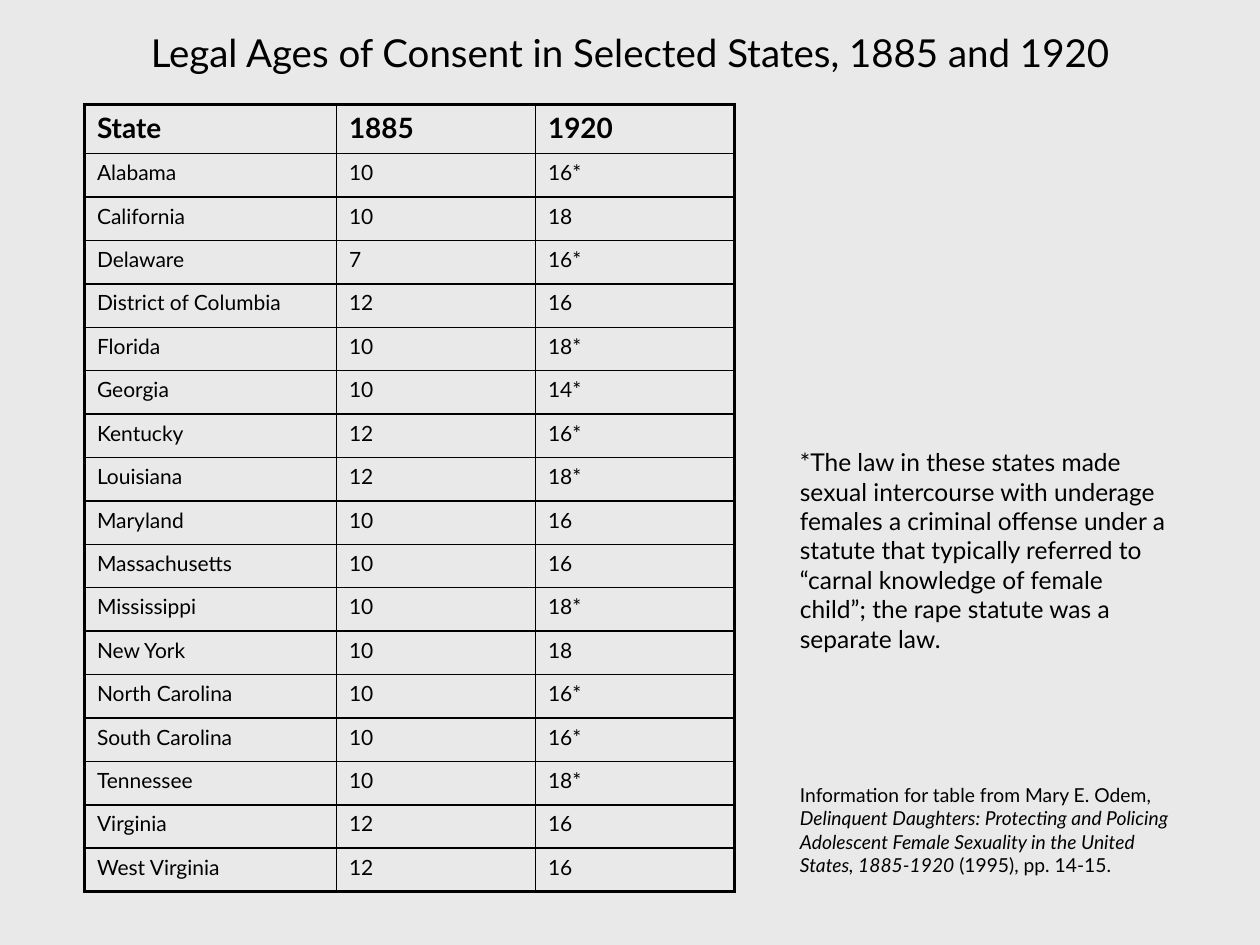
"""Build a slide comparing legal ages of consent by state, 1885 and 1920."""
from typing import NamedTuple

from lxml import etree
from pptx import Presentation, util as u
from pptx.dml.color import RGBColor
from pptx.enum import text
from pptx.oxml import ns

FONT, INK, PAPER = "Lato", "000000", "E9E9E9"
WIDTH, HEIGHT = u.Inches(10), u.Inches(7.5)
THICK, THIN = 2.25, 1
HEADER_HEIGHT, TABLE_HEIGHT = 0.39, 6.25
COLUMNS = (2, 1.58, 1.58)


class Area(NamedTuple):
    """A rectangle in inches."""

    left: float
    top: float
    width: float
    height: float

    def lengths(self) -> list[int]:
        return [u.Inches(value) for value in self]


class Span(NamedTuple):
    """A stretch of text in one style."""

    words: str
    italic: bool = False


class Note(NamedTuple):
    """A text box beside the table."""

    area: Area
    size: float
    spans: tuple[Span, ...]


class Record(NamedTuple):
    """A table row."""

    state: str
    earlier: str
    later: str


RECORDS = (
    Record("State", "1885", "1920"),
    Record("Alabama", "10", "16*"),
    Record("California", "10", "18"),
    Record("Delaware", "7", "16*"),
    Record("District of Columbia", "12", "16"),
    Record("Florida", "10", "18*"),
    Record("Georgia", "10", "14*"),
    Record("Kentucky", "12", "16*"),
    Record("Louisiana", "12", "18*"),
    Record("Maryland", "10", "16"),
    Record("Massachusetts", "10", "16"),
    Record("Mississippi", "10", "18*"),
    Record("New York", "10", "18"),
    Record("North Carolina", "10", "16*"),
    Record("South Carolina", "10", "16*"),
    Record("Tennessee", "10", "18*"),
    Record("Virginia", "12", "16"),
    Record("West Virginia", "12", "16"),
)
NOTES = (
    Note(Area(6.25, 3.5, 3.17, 1.73), 14, (
        Span("*The law in these states made sexual intercourse with underage females "
             "a criminal offense under a statute that typically referred to “carnal "
             "knowledge of female child”; the rape statute was a separate law."),
    )),
    Note(Area(6.25, 6.17, 3.25, 0.84), 11, (
        Span("Information for table from Mary E. Odem, "),
        Span("Delinquent Daughters: Protecting and Policing Adolescent Female "
             "Sexuality in the United States, 1885-1920 ", italic=True),
        Span("(1995), pp. 14-15."),
    )),
)


def color(value: str) -> RGBColor:
    return RGBColor.from_string(value)


def style(para, size: float, bold: bool = False) -> None:
    font = para.font
    font.name, font.size, font.bold = FONT, u.Pt(size), bold
    font.color.rgb = color(INK)


def set_borders(cell, widths: dict[str, float]) -> None:
    properties = cell._tc.get_or_add_tcPr()
    for place, side in enumerate("LRTB"):
        line = etree.Element(ns.qn(f"a:ln{side}"), w=str(u.Pt(widths[side])))
        fill = etree.SubElement(line, ns.qn("a:solidFill"))
        etree.SubElement(fill, ns.qn("a:srgbClr"), val=INK)
        properties.insert(place, line)


def add_title(page, words: str) -> None:
    title = page.shapes.title
    title.left, title.top, title.width, title.height = Area(0.75, 0.25, 8.5, 0.33).lengths()
    frame = title.text_frame
    frame.text = words
    frame.vertical_anchor = text.MSO_ANCHOR.MIDDLE
    frame.auto_size = text.MSO_AUTO_SIZE.NONE
    para = frame.paragraphs[0]
    para.alignment = text.PP_ALIGN.CENTER
    style(para, 22)


def add_ages(page, records: tuple[Record, ...]) -> None:
    area = Area(0.67, 0.83, sum(COLUMNS), TABLE_HEIGHT)
    table = page.shapes.add_table(len(records), len(COLUMNS), *area.lengths()).table
    table.first_row = table.horz_banding = False
    for column, width in zip(table.columns, COLUMNS):
        column.width = u.Inches(width)
    last_row, last_column = len(records) - 1, len(COLUMNS) - 1
    body_height = (TABLE_HEIGHT - HEADER_HEIGHT) / last_row
    for r, record in enumerate(records):
        header = r == 0
        table.rows[r].height = u.Inches(HEADER_HEIGHT if header else body_height)
        for c, words in enumerate(record):
            cell = table.cell(r, c)
            cell.text = words
            cell.fill.background()
            style(cell.text_frame.paragraphs[0], 16 if header else 12, header)
            outer = {"L": c == 0, "R": c == last_column, "T": header, "B": r == last_row}
            set_borders(cell, {side: THICK if edge else THIN for side, edge in outer.items()})


def add_note(page, note: Note) -> None:
    frame = page.shapes.add_textbox(*note.area.lengths()).text_frame
    frame.word_wrap = True
    frame.auto_size = text.MSO_AUTO_SIZE.SHAPE_TO_FIT_TEXT
    para = frame.paragraphs[0]
    style(para, note.size)
    for span in note.spans:
        run = para.add_run()
        run.text = span.words
        if span.italic:
            run.font.italic = True


def main() -> None:
    deck = Presentation()
    deck.slide_width, deck.slide_height = WIDTH, HEIGHT
    page = deck.slides.add_slide(deck.slide_layouts.get_by_name("Title Only"))
    page.background.fill.solid()
    page.background.fill.fore_color.rgb = color(PAPER)
    add_title(page, "Legal Ages of Consent in Selected States, 1885 and 1920")
    add_ages(page, RECORDS)
    for note in NOTES:
        add_note(page, note)
    deck.save("out.pptx")


if __name__ == "__main__":
    main()
